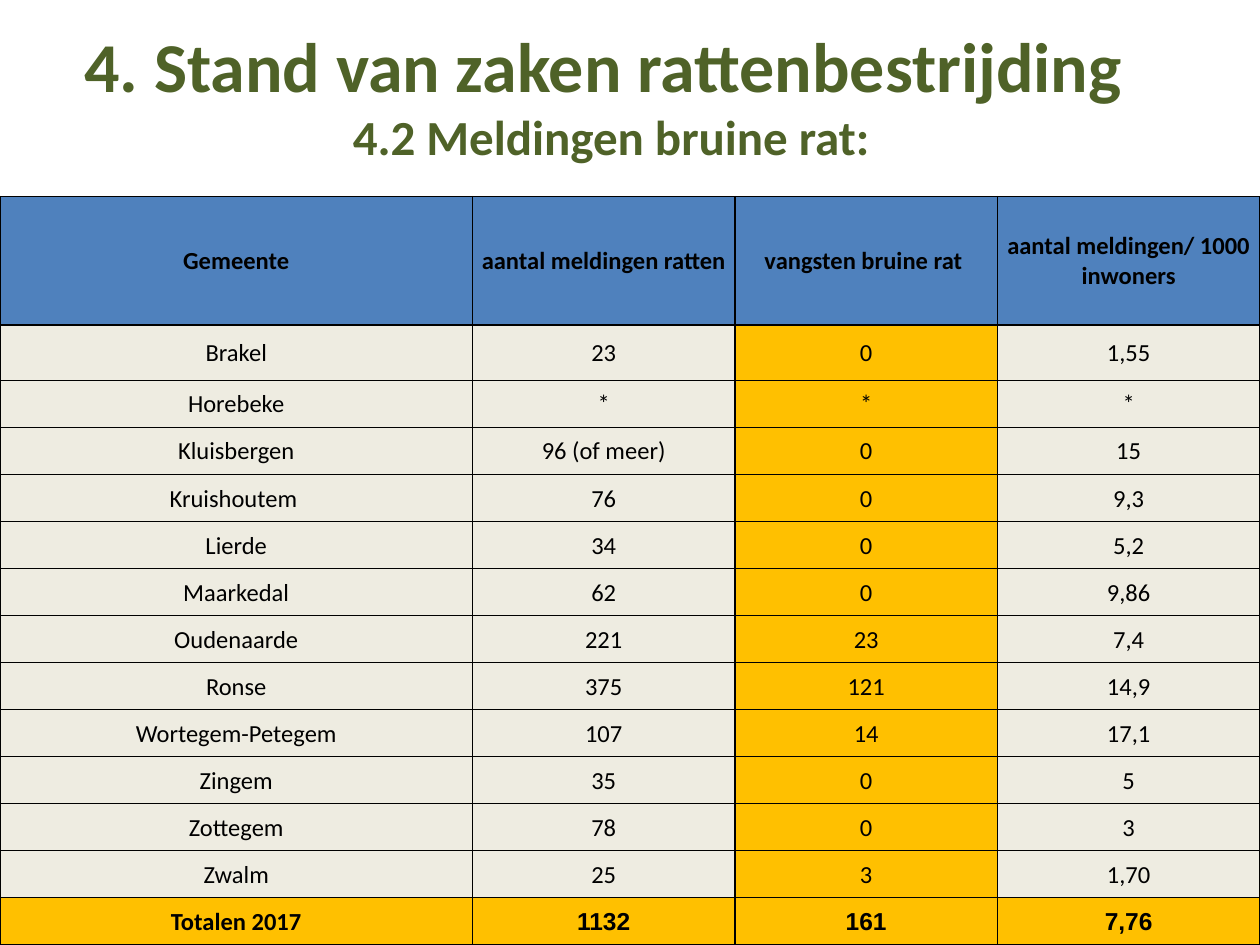
from dataclasses import dataclass

from pptx import Presentation
from pptx.dml.color import RGBColor
from pptx.enum.text import MSO_ANCHOR, MSO_AUTO_SIZE, PP_ALIGN
from pptx.oxml import parse_xml
from pptx.oxml.ns import nsdecls
from pptx.util import Inches, Pt

CENTER = PP_ALIGN.CENTER
TOP, MIDDLE = MSO_ANCHOR.TOP, MSO_ANCHOR.MIDDLE
NO_AUTOFIT = MSO_AUTO_SIZE.NONE
TITLE_ONLY = 5


@dataclass(frozen=True)
class Theme:
    font: str = "Calibri"
    total_font: str = "Arial"
    title_color: str = "4F6228"
    text_color: str = "000000"
    border_color: str = "000000"
    header_fill: str = "4F81BD"
    body_fill: str = "EEECE1"
    accent_fill: str = "FFC000"
    title_size: int = 40
    subtitle_size: int = 28
    table_size: int = 14
    border_width: int = 1


TITLE = "4. Stand van zaken rattenbestrijding "
SUBTITLE = "4.2 Meldingen bruine rat:"
ROWS = [
    ("Gemeente", "aantal meldingen ratten", "vangsten bruine rat ",
     "aantal meldingen/ 1000 inwoners"),
    ("Brakel", "23", "0", "1,55"),
    ("Horebeke", "*", "*", "*"),
    ("Kluisbergen", "96 (of meer)", "0", "15"),
    ("Kruishoutem ", "76", "0", "9,3"),
    ("Lierde", "34", "0", "5,2"),
    ("Maarkedal", "62", "0", "9,86"),
    ("Oudenaarde", "221", "23", "7,4"),
    ("Ronse", "375", "121", "14,9"),
    ("Wortegem-Petegem", "107", "14", "17,1"),
    ("Zingem", "35", "0", "5"),
    ("Zottegem", "78", "0", "3"),
    ("Zwalm", "25", "3", "1,70"),
    ("Totalen 2017", "1132", "161", "7,76"),
]
CATCH_COLUMN = 2
TABLE_TOP, TABLE_WIDTH, TABLE_HEIGHT = 1.56, 10, 5.94
NAME_WIDTH, HEADER_HEIGHT, FIRST_HEIGHT = 3.75, 1.02, 0.44


class SlideBuilder:
    def __init__(self, slide, theme):
        self.s = slide
        self.theme = theme

    def text(self, p, text, color, **formats):
        p.alignment = CENTER
        r = p.add_run()
        r.text = text
        for name, value in formats.items():
            setattr(r.font, name, value)
        r.font.color.rgb = RGBColor.from_string(color)

    def title(self, title, subtitle):
        t = self.theme
        sp = self.s.shapes.title
        sp.left, sp.top, sp.width, sp.height = map(Inches, (0.35, 0.13, 9, 5.42))
        tf = sp.text_frame
        for name, value in {"word_wrap": True, "auto_size": NO_AUTOFIT,
                            "vertical_anchor": TOP}.items():
            setattr(tf, name, value)
        self.text(tf.paragraphs[0], title, t.title_color,
                  name=t.font, size=Pt(t.title_size), bold=True)
        self.text(tf.add_paragraph(), subtitle, t.title_color,
                  name=t.font, size=Pt(t.subtitle_size), bold=True)

    def borders(self, cell):
        t = self.theme
        tc_pr = cell._tc.get_or_add_tcPr()
        for side in "LRTB":
            tc_pr.append(parse_xml(
                f'<a:ln{side} {nsdecls("a")} w="{Pt(t.border_width)}"><a:solidFill>'
                f'<a:srgbClr val="{t.border_color}"/></a:solidFill></a:ln{side}>'))

    def cell(self, cell, text, fill, font, bold):
        t = self.theme
        for name, value in {"margin_left": Inches(0.01), "margin_right": Inches(0.01),
                            "margin_top": Inches(0.01), "margin_bottom": 0,
                            "vertical_anchor": MIDDLE}.items():
            setattr(cell, name, value)
        self.borders(cell)
        cell.fill.solid()
        cell.fill.fore_color.rgb = RGBColor.from_string(fill)
        self.text(cell.text_frame.paragraphs[0], text, t.text_color,
                  name=font, size=Pt(t.table_size), bold=bold)

    def table(self, rows):
        t = self.theme
        last, columns = len(rows) - 1, len(rows[0])
        table = self.s.shapes.add_table(
            len(rows), columns, 0, Inches(TABLE_TOP),
            Inches(TABLE_WIDTH), Inches(TABLE_HEIGHT)).table
        table.first_row = table.horz_banding = False
        value_width = (TABLE_WIDTH - NAME_WIDTH) / (columns - 1)
        row_height = (TABLE_HEIGHT - HEADER_HEIGHT - FIRST_HEIGHT) / (last - 1)
        for j, column in enumerate(table.columns):
            column.width = Inches(value_width if j else NAME_WIDTH)
        for i, values in enumerate(rows):
            table.rows[i].height = Inches({0: HEADER_HEIGHT, 1: FIRST_HEIGHT}.get(i, row_height))
            for j, text in enumerate(values):
                if i == 0:
                    fill = t.header_fill
                elif i == last or j == CATCH_COLUMN:
                    fill = t.accent_fill
                else:
                    fill = t.body_fill
                font = t.total_font if i == last and j else t.font
                self.cell(table.cell(i, j), text, fill, font, i in (0, last))


def main():
    prs = Presentation()
    prs.slide_width, prs.slide_height = Inches(10), Inches(7.5)
    builder = SlideBuilder(prs.slides.add_slide(prs.slide_layouts[TITLE_ONLY]), Theme())
    builder.title(TITLE, SUBTITLE)
    builder.table(ROWS)
    prs.save("out.pptx")


if __name__ == "__main__":
    main()
